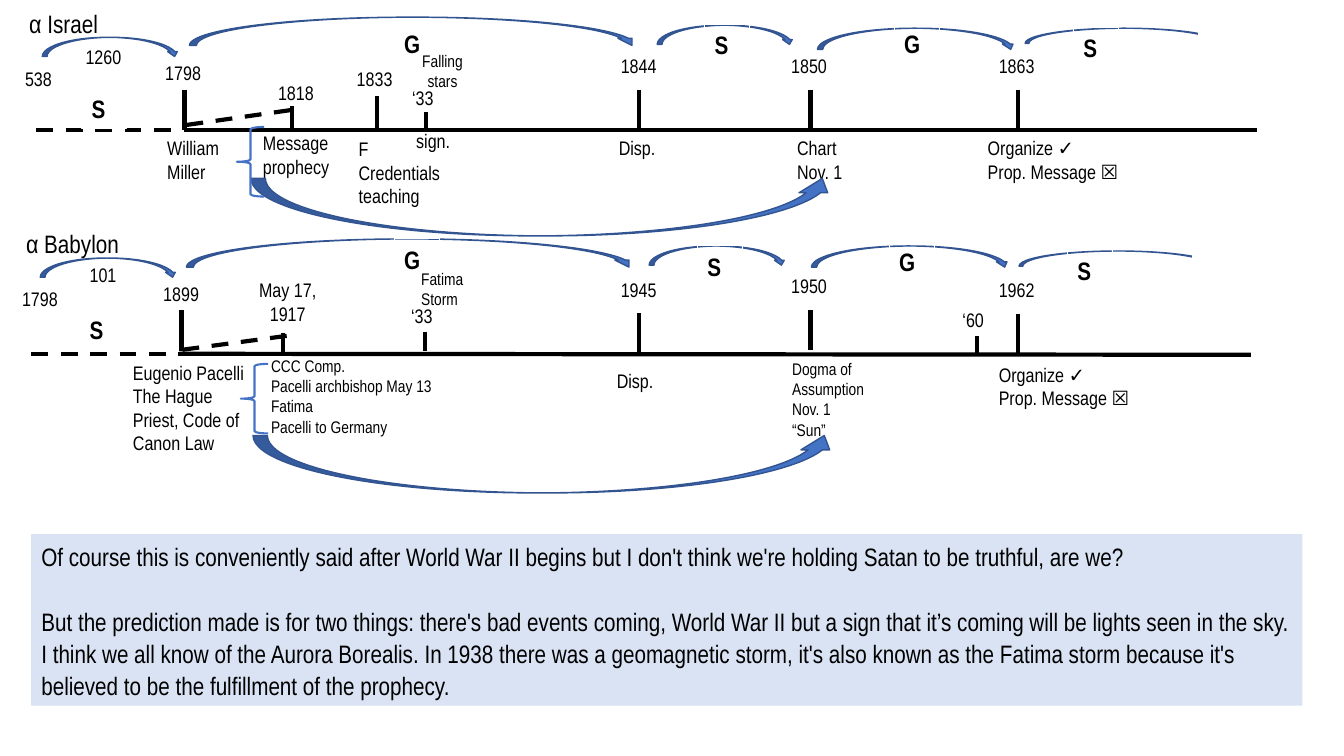
from dataclasses import dataclass

from lxml.etree import SubElement
from pptx import Presentation
from pptx.dml.color import RGBColor
from pptx.enum.dml import MSO_LINE
from pptx.enum.shapes import MSO_CONNECTOR, MSO_SHAPE
from pptx.enum.text import MSO_ANCHOR, MSO_AUTO_SIZE, PP_ALIGN
from pptx.oxml.ns import qn
from pptx.util import Inches, Pt

BLACK = RGBColor(0x00, 0x00, 0x00)
WHITE = RGBColor(0xFF, 0xFF, 0xFF)
BLUE = RGBColor(0x44, 0x72, 0xC4)
DARK_BLUE = RGBColor(0x32, 0x54, 0x91)
PALE_BLUE = RGBColor(0xDA, 0xE3, 0xF3)

CELL = 0.1
COLUMNS, ROWS = 133.33, 75
LINE_ROWS_PER_POINT = 0.17
YEAR_WIDTH, SHORT_YEAR_WIDTH = 6.1, 4.3
ARC_SIZES = [(13.6, 1.9), (44.6, 2.8), (13.6, 1.9), (19.7, 2.1), (19.7, 1.5)]
ARC_LETTERS = "SGSGS"
LETTER_WIDTH = 4.5


@dataclass
class Note:
    """A text block with its grid position."""

    left: float
    top: float
    width: float
    text: str
    size: int = 14
    lines: int = 0
    align: PP_ALIGN = PP_ALIGN.LEFT


@dataclass
class Timeline:
    """The parts of one timeline in grid units."""

    axis: tuple
    dashes: list
    ticks: list
    arcs: list
    letters: list
    years: list
    notes: list
    brace: tuple
    sweep: tuple


ISRAEL = Timeline(
    axis=(18.5, 12.9, 124.7, 12.9),
    dashes=[(3.6, 12.9, 18.5, 12.9), (18.5, 12.4, 29, 10.9)],
    ticks=[(18.3, 8.9, 12.9), (29, 10.5, 12.8), (37.4, 9.5, 12.7), (42.3, 11.1, 13),
           (63.4, 8.9, 12.9), (80.4, 8.9, 12.9), (101, 8.9, 12.9)],
    arcs=[(4.2, 3.7), (18.8, 1.7), (65.2, 2.5), (81.1, 2.8), (101.7, 2.8)],
    letters=[(8.1, 8.8), (39.1, 2.3), (69.9, 2.4), (88.7, 2.3), (106.5, 2.7)],
    years=[(1.5, 6.1, "538"), (7.5, 4, "1260"), (15.4, 5.6, "1798"), (26.6, 7.5, "1818"),
           (34.4, 6.1, "1833"), (39.9, 8, "‘33"), (60.6, 4.9, "1844"),
           (77.5, 4.9, "1850"), (98.1, 4.9, "1863")],
    notes=[Note(15.6, 13, 7.4, "William\nMiller"),
           Note(25.1, 12.5, 9.5, "Message\nprophecy"),
           Note(34.6, 13.1, 10.6, "F\nCredentials\nteaching"),
           Note(40.3, 4.5, 7.2, "Falling\nstars", 12, align=PP_ALIGN.CENTER),
           Note(40.3, 12.3, 6.1, "sign."),
           Note(60.4, 13, 6.1, "Disp."),
           Note(78.1, 13, 7.3, "Chart\nNov. 1"),
           Note(97, 13, 15.1, "Organize ✓\nProp. Message ☒")],
    brace=(23.5, 12.6),
    sweep=(51.1, -8.5),
)

BABYLON = Timeline(
    axis=(17.8, 35.1, 124.1, 35.2),
    dashes=[(3.1, 35.1, 18, 35.1), (18.1, 34.7, 28.6, 33.3)],
    ticks=[(18, 30.8, 34.8), (28.1, 33, 35.2), (42.2, 32.9, 34.8), (63.4, 31.1, 35.1),
           (80.4, 30.8, 34.7), (96.9, 33.3, 35.2), (101, 31.2, 35.1)],
    arcs=[(4, 25.6), (18.5, 23.7), (64.4, 24.4), (80.5, 24.4), (101.1, 24.9)],
    letters=[(7.9, 30.7), (39.1, 23.7), (69.2, 24.4), (88.2, 23.9), (105.9, 24.8)],
    years=[(1.2, 28, "1798"), (7.9, 25.6, "101"), (15.2, 27.5, "1899"),
           (39.8, 29.7, "‘33"), (60.6, 27.1, "1945"), (77.5, 26.7, "1950"),
           (94.5, 30.1, "‘60"), (98.1, 27.1, "1962")],
    notes=[Note(1.6, 22.2, 20.9, "α Babylon", 18),
           Note(12.2, 35.3, 14.9, "Eugenio Pacelli\nThe Hague\nPriest, Code of Canon Law", lines=4),
           Note(23.9, 27.1, 9.3, "May 17,\n1917", align=PP_ALIGN.CENTER),
           Note(25.9, 34.8, 19.2,
                "CCC Comp.\nPacelli archbishop May 13\nFatima\nPacelli to Germany", 12),
           Note(40.8, 26.2, 7.2, "Fatima Storm", 12, lines=2),
           Note(60.2, 36.1, 6.1, "Disp."),
           Note(77.6, 35.1, 10.9, "Dogma of\nAssumption\nNov. 1\n“Sun”", 12),
           Note(98.1, 35.5, 15.1, "Organize ✓\nProp. Message ☒")],
    brace=(23.9, 36.1),
    sweep=(51.3, 17),
)

COMMENTARY = (
    "Of course this is conveniently said after World War II begins but I don't think "
    "we're holding Satan to be truthful, are we?\n"
    "But the prediction made is for two things: there's bad events coming, World War II "
    "but a sign that it’s coming will be lights seen in the sky. I think we all know of "
    "the Aurora Borealis. In 1938 there was a geomagnetic storm, it's also known as the "
    "Fatima storm because it's believed to be the fulfillment of the prophecy."
)


class TimelineSlide:
    """Draws timeline elements on one slide, measured in grid columns and rows."""

    font_name = "Arial Narrow"

    def __init__(self, presentation):
        self.slide = presentation.slides.add_slide(presentation.slide_layouts[1])
        self.shapes = self.slide.shapes

    def grid(self, *cells):
        return [Inches(cell * CELL) for cell in cells]

    def set_text(self, shape, text, size, bold=False, align=PP_ALIGN.LEFT):
        frame = shape.text_frame
        frame.text = text
        frame.word_wrap = True
        frame.auto_size = MSO_AUTO_SIZE.NONE
        frame.vertical_anchor = MSO_ANCHOR.TOP
        for paragraph in frame.paragraphs:
            paragraph.alignment = align
            paragraph.font.name = self.font_name
            paragraph.font.size = Pt(size)
            paragraph.font.bold = bold
            paragraph.font.color.rgb = BLACK
        return frame.paragraphs

    def place(self, shape, *cells):
        shape.left, shape.top, shape.width, shape.height = self.grid(*cells)

    def title(self, note):
        shape = self.shapes.title
        self.place(shape, note.left, note.top, note.width, 4)
        self.set_text(shape, note.text, note.size)

    def panel(self, left, top, width, height, text):
        shape = self.slide.placeholders[1]
        self.place(shape, left, top, width, height)
        shape.fill.solid()
        shape.fill.fore_color.rgb = PALE_BLUE
        paragraphs = self.set_text(shape, text, 18)
        paragraphs[0].space_after = Pt(23)
        for paragraph in paragraphs:
            paragraph.line_spacing = 1.07
            paragraph.space_before = Pt(0)
            properties = paragraph._p.get_or_add_pPr()
            properties.set("marL", "0")
            properties.set("indent", "0")
            bullet = SubElement(properties, qn("a:buNone"))
            properties.find(qn("a:defRPr")).addprevious(bullet)

    def note(self, note):
        lines = note.lines or note.text.count("\n") + 1
        height = 1 + lines * note.size * LINE_ROWS_PER_POINT
        shape = self.shapes.add_textbox(*self.grid(note.left, note.top, note.width, height))
        self.set_text(shape, note.text, note.size, align=note.align)

    def line(self, start_x, start_y, end_x, end_y, dashed=False):
        connector = self.shapes.add_connector(
            MSO_CONNECTOR.STRAIGHT, *self.grid(start_x, start_y, end_x, end_y))
        connector.line.color.rgb = BLACK
        connector.line.width = Pt(3)
        if dashed:
            connector.line.dash_style = MSO_LINE.DASH
        SubElement(connector._element.spPr, qn("a:effectLst"))

    def preset(self, kind, cells, fill, outline, weight, rotation=0):
        shape = self.shapes.add_shape(kind, *self.grid(*cells))
        shape.shadow.inherit = False
        shape.rotation = rotation
        if fill is None:
            shape.fill.background()
        else:
            shape.fill.solid()
            shape.fill.fore_color.rgb = fill
        shape.line.color.rgb = outline
        shape.line.width = Pt(weight)
        return shape

    def letter(self, left, top, text):
        shape = self.preset(MSO_SHAPE.RECTANGLE, (left, top, LETTER_WIDTH, 4), None, WHITE, 0.75)
        self.set_text(shape, text, 18, bold=True)

    def timeline(self, timeline):
        self.line(*timeline.axis)
        for dash in timeline.dashes:
            self.line(*dash, dashed=True)
        for column, top, bottom in timeline.ticks:
            self.line(column, top, column, bottom)
        for arc, size, letter, text in zip(timeline.arcs, ARC_SIZES, timeline.letters, ARC_LETTERS):
            self.preset(MSO_SHAPE.CURVED_DOWN_ARROW, arc + size, BLUE, DARK_BLUE, 1)
            self.letter(*letter, text)
        last_left, last_top = timeline.arcs[-1]
        cover = (last_left + 17.2, last_top - 1.6, 6.9, 4.8)
        self.preset(MSO_SHAPE.RECTANGLE, cover, WHITE, WHITE, 1)
        for left, top, text in timeline.years:
            width = SHORT_YEAR_WIDTH if text.startswith("‘") else YEAR_WIDTH
            self.note(Note(left, top, width, text))
        for note in timeline.notes:
            self.note(note)
        self.preset(MSO_SHAPE.CURVED_RIGHT_ARROW, timeline.sweep + (5.7, 58.1),
                    BLUE, DARK_BLUE, 1, rotation=270)
        self.preset(MSO_SHAPE.LEFT_BRACE, timeline.brace + (2.7, 6.9), None, BLUE, 1.5)


presentation = Presentation()
presentation.slide_width, presentation.slide_height = Inches(COLUMNS * CELL), Inches(ROWS * CELL)
slide = TimelineSlide(presentation)
slide.panel(3.1, 53, 126.1, 17, COMMENTARY)
slide.title(Note(1.9, 0.3, 20.9, "α Israel", 18))
for timeline in (ISRAEL, BABYLON):
    slide.timeline(timeline)
presentation.save("out.pptx")
